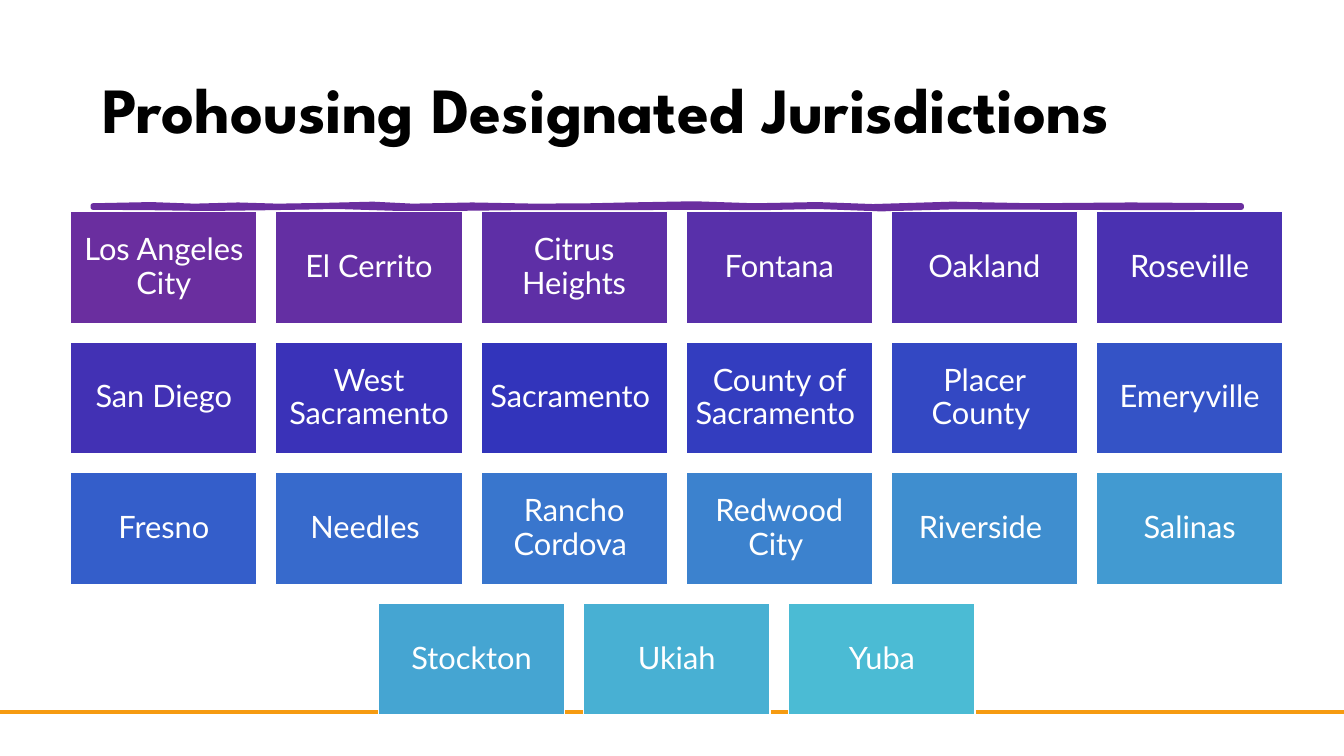
from lxml.etree import SubElement
from pptx import Presentation
from pptx.dml.color import RGBColor
from pptx.enum.shapes import MSO_CONNECTOR, MSO_SHAPE
from pptx.enum.text import MSO_ANCHOR, PP_ALIGN
from pptx.oxml.ns import qn
from pptx.util import Cm, Pt

TITLE = "Prohousing Designated Jurisdictions"
JURISDICTIONS = {
    "Los Angeles City": "6A2E9F", "El Cerrito": "642FA3",
    "Citrus Heights": "5E2FA6", "Fontana": "5830AA",
    "Oakland": "5130AD", "Roseville": "4A31B1",
    "San Diego": "4231B4", "West Sacramento": "3A32B8",
    "Sacramento ": "3234BB", "County of Sacramento ": "333DBF",
    "Placer County ": "3348C3", "Emeryville": "3453C6",
    "Fresno": "345ECA", "Needles ": "376ACC",
    "Rancho Cordova ": "3976CD", "Redwood City ": "3C82CE",
    "Riverside ": "3F8ECF", "Salinas": "429AD1",
    "Stockton": "45A5D2", "Ukiah": "48B0D3", "Yuba": "4BBBD4",
}
COLORS = {"title": "000000", "white": "FFFFFF", "brush": "6A2E9F", "footer": "F69B11"}

SLIDE_W, SLIDE_H = 33.87, 19.05
COLUMNS = 6
TILE_W, TILE_H = 4.7, 2.82
PITCH_X, PITCH_Y = 5.17, 3.29
GRID_LEFT, GRID_TOP = 1.78, 5.33

# Hand-drawn rule: (x, y) in cm along its upper and then its lower edge
BRUSH_TOP = [(2.34, 5.18), (3.8, 5.15), (4.9, 5.19), (6, 5.16), (7, 5.19), (8.2, 5.17),
             (9.4, 5.14), (10.4, 5.19), (11.9, 5.16), (13.5, 5.19), (14.9, 5.18),
             (15.8, 5.16), (17.5, 5.13), (19, 5.18), (20.6, 5.15), (22, 5.2),
             (24, 5.14), (26, 5.18), (28.5, 5.16), (31.29, 5.18)]
BRUSH_BOTTOM = [(31.29, 5.23), (29, 5.24), (26.5, 5.23), (24, 5.22), (22.2, 5.27),
                (20.6, 5.21), (19.2, 5.24), (17.5, 5.23), (15.5, 5.24), (13, 5.24),
                (10.4, 5.27), (8.5, 5.21), (6.8, 5.24), (5.2, 5.26), (3.8, 5.24), (2.34, 5.23)]


def rgb(value):
    return RGBColor.from_string(value)


def write(sp, text, font, size, color, bold=False, align=PP_ALIGN.LEFT):
    tf = sp.text_frame
    tf.word_wrap = True
    tf.vertical_anchor = MSO_ANCHOR.MIDDLE
    p = tf.paragraphs[0]
    p.text = text
    p.alignment = align
    p.line_spacing = 0.9
    p.font.name, p.font.size, p.font.bold = font, Pt(size), bold
    p.font.color.rgb = rgb(color)
    return tf


def paint(sp, fill, line, width):
    sp.shadow.inherit = False
    sp.fill.solid()
    sp.fill.fore_color.rgb = rgb(fill)
    sp.line.color.rgb = rgb(line)
    sp.line.width = Pt(width)


def add_footer_line(shapes):
    y = Cm(17.95)
    line = shapes.add_connector(MSO_CONNECTOR.STRAIGHT, 0, y, Cm(SLIDE_W), y)
    line.line.color.rgb = rgb(COLORS["footer"])
    line.line.width = Pt(3)
    SubElement(line._element.spPr, qn("a:effectLst"))


def add_brush_rule(shapes):
    points = [(Cm(x), Cm(y)) for x, y in BRUSH_TOP + BRUSH_BOTTOM]
    builder = shapes.build_freeform(*points[0])
    builder.add_line_segments(points[1:], close=True)
    paint(builder.convert_to_shape(), COLORS["brush"], COLORS["brush"], 3.25)


def add_tiles(shapes):
    """Lay the tiles out row by row, centring the last, shorter row."""
    for i, (name, fill) in enumerate(JURISDICTIONS.items()):
        row, column = divmod(i, COLUMNS)
        in_row = min(COLUMNS, len(JURISDICTIONS) - row * COLUMNS)
        x = GRID_LEFT + (column + (COLUMNS - in_row) / 2) * PITCH_X
        y = GRID_TOP + row * PITCH_Y
        sp = shapes.add_shape(MSO_SHAPE.RECTANGLE, Cm(x), Cm(y), Cm(TILE_W), Cm(TILE_H))
        paint(sp, fill, COLORS["white"], 1)
        tf = write(sp, name, "Lato", 22, COLORS["white"], align=PP_ALIGN.CENTER)
        tf.margin_left = tf.margin_right = tf.margin_top = tf.margin_bottom = Cm(0.23)


def main():
    prs = Presentation()
    prs.slide_width, prs.slide_height = Cm(SLIDE_W), Cm(SLIDE_H)
    shapes = prs.slides.add_slide(prs.slide_layouts[6]).shapes
    add_footer_line(shapes)
    title = shapes.add_textbox(Cm(2.33), Cm(1.01), Cm(29.21), Cm(3.68))
    write(title, TITLE, "League Spartan", 46, COLORS["title"], bold=True)
    add_brush_rule(shapes)
    add_tiles(shapes)
    prs.save("out.pptx")


if __name__ == "__main__":
    main()
